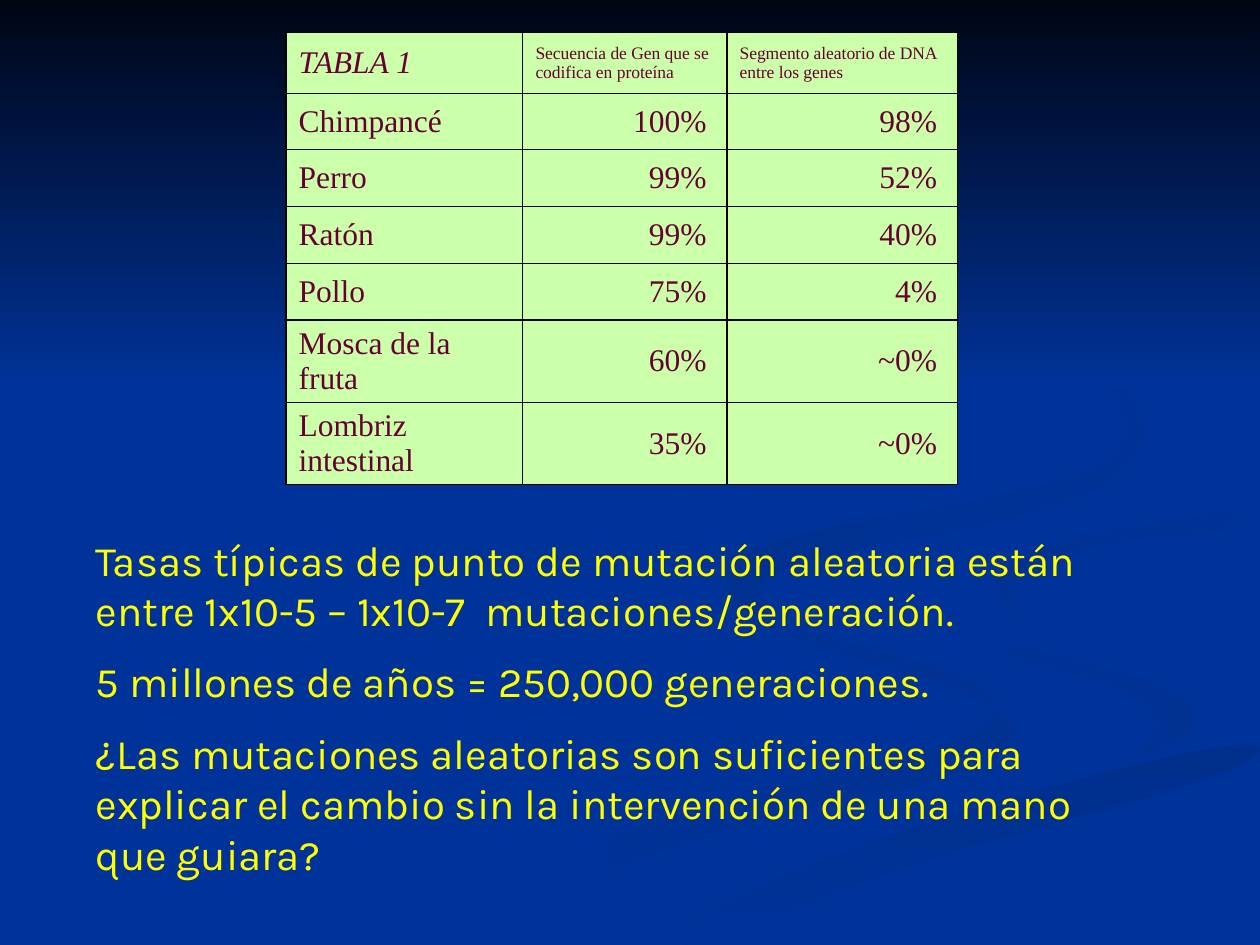
from typing import NamedTuple

from lxml.etree import SubElement
from pptx import Presentation
from pptx.dml.color import RGBColor
from pptx.enum.shapes import MSO_SHAPE
from pptx.enum.text import MSO_ANCHOR, PP_ALIGN
from pptx.oxml.ns import qn
from pptx.util import Emu, Inches, Pt

# Grid: the slide is 100 columns by 75 rows
COLS, ROWS = 100, 75
UNIT = Inches(10) // COLS

BLUE = RGBColor(0x00, 0x33, 0x99)
NIGHT = RGBColor(0x00, 0x05, 0x14)
DEEP = RGBColor(0x00, 0x2F, 0x8C)
DUSK = RGBColor(0x00, 0x31, 0x93)
MINT = RGBColor(0xCC, 0xFF, 0xAA)
WINE = RGBColor(0x66, 0x00, 0x33)
BLACK = RGBColor(0x00, 0x00, 0x00)
YELLOW = RGBColor(0xFF, 0xFF, 0x00)

Point = tuple[float, float]


class Shade(NamedTuple):
    start: RGBColor
    end: RGBColor
    angle: int  # clockwise degrees


class Ribbon(NamedTuple):
    shade: Shade
    points: list[Point]


class Entry(NamedTuple):
    name: str
    gene: str
    random: str


# Each outline lists only its bends; they are rounded when drawn
RIBBONS = [
    Ribbon(Shade(BLUE, DUSK, 0), [
        (57, 45), (58, 49), (80, 54), (78, 59), (50, 65), (30, 75),
        (36, 75), (55, 66), (80, 61), (81, 56), (60, 50)]),
    Ribbon(Shade(BLUE, DUSK, 45), [
        (72, 46), (75, 51), (91, 55), (92, 58), (89, 61), (97, 57),
        (89, 53), (75, 50)]),
    Ribbon(Shade(DEEP, BLUE, 90), [
        (50, 75), (57, 75), (70, 69), (100, 61), (100, 58), (70, 66)]),
    Ribbon(Shade(DUSK, BLUE, 45), [
        (78, 46), (82, 50), (79, 46), (87, 43), (100, 42), (100, 40),
        (83, 43)]),
    Ribbon(Shade(DEEP, BLUE, 45), [
        (76, 23), (88, 29), (90, 36), (82, 39), (59, 43), (57, 47),
        (62, 50), (59, 45), (83, 41), (92, 36), (88, 28)]),
]
SKY = Shade(NIGHT, BLUE, 90)

HEAD = Entry("TABLA 1", "Secuencia de Gen que se codifica en proteína",
             "Segmento aleatorio de DNA entre los genes")
BODY = [
    Entry("Chimpancé", "100% ", "98% "),
    Entry("Perro", "99% ", "52% "),
    Entry("Ratón", "99% ", "40% "),
    Entry("Pollo", "75% ", "4% "),
    Entry("Mosca de la fruta", "60% ", "~0% "),
    Entry("Lombriz intestinal", "35% ", "~0% "),
]
NOTES = [
    "Tasas típicas de punto de mutación aleatoria están entre "
    "1x10-5 – 1x10-7  mutaciones/generación.",
    "5 millones de años = 250,000 generaciones.",
    "¿Las mutaciones aleatorias son suficientes para explicar el cambio "
    "sin la intervención de una mano que guiara?",
]


def grid(*cells: float) -> list[Emu]:
    return [Emu(round(cell * UNIT)) for cell in cells]


def style(para, font: str, size: int, color: RGBColor, slant: bool = False) -> None:
    for run in para.runs:
        run.font.name, run.font.size = font, Pt(size)
        run.font.color.rgb = color
        run.font.italic = slant


def smooth(points: list[Point], rounds: int = 3) -> list[Point]:
    """Round a closed outline by cutting its corners again and again."""
    for _ in range(rounds):
        pairs = zip(points, points[1:] + points[:1])
        points = [(a + (c - a) * t, b + (d - b) * t)
                  for (a, b), (c, d) in pairs for t in (0.25, 0.75)]
    return points


def paint(shape, shade: Shade) -> None:
    shape.shadow.inherit = False
    shape.line.fill.background()
    shape.fill.gradient()
    shape.fill.gradient_angle = -shade.angle % 360
    for stop, color in zip(shape.fill.gradient_stops, shade[:2]):
        stop.color.rgb = color


def draw_ribbon(slide, item: Ribbon) -> None:
    first, *rest = smooth(item.points)
    pen = slide.shapes.build_freeform(*grid(*first))
    pen.add_line_segments([grid(*point) for point in rest], close=True)
    paint(pen.convert_to_shape(), item.shade)


def frame_cell(cell) -> None:
    """Fill the cell and rule its four sides."""
    props = cell._tc.get_or_add_tcPr()
    for side in ("a:lnL", "a:lnR", "a:lnT", "a:lnB"):
        line = SubElement(props, qn(side), w=str(Pt(0.75)))
        fill = SubElement(line, qn("a:solidFill"))
        SubElement(fill, qn("a:srgbClr"), val=str(BLACK))
    cell.fill.solid()
    cell.fill.fore_color.rgb = MINT


def draw_table(slide, head: Entry, body: list[Entry]) -> None:
    data = [head, *body]
    table = slide.shapes.add_table(
        len(data), len(head), *grid(22.7, 2.6, 53.3, 31.8)).table
    table.first_row = table.horz_banding = False
    for col, width in zip(table.columns, grid(18.8, 16.2, 18.3)):
        col.width = width
    for r, entry in enumerate(data):
        table.rows[r].height = grid(4.5 if r else 4.8)[0]
        for c, text in enumerate(entry):
            cell = table.cell(r, c)
            frame_cell(cell)
            cell.vertical_anchor = MSO_ANCHOR.MIDDLE
            para = cell.text_frame.paragraphs[0]
            para.text = text
            para.alignment = PP_ALIGN.RIGHT if r and c else PP_ALIGN.LEFT
            size = 10 if c and not r else 18
            style(para, "Times New Roman", size, WINE, slant=r == c == 0)


def draw_notes(slide, notes: list[str]) -> None:
    frame = slide.shapes.add_textbox(*grid(6.6, 41.9, 85.8, 25.2)).text_frame
    frame.word_wrap = True
    frame.text = "\n".join(notes)
    for para in frame.paragraphs:
        para.space_before = Pt(12)
        style(para, "Karla", 24, YELLOW)


def main() -> None:
    deck = Presentation()
    deck.slide_width, deck.slide_height = grid(COLS, ROWS)
    slide = deck.slides.add_slide(deck.slide_layouts[6])
    # Backdrop
    slide.background.fill.solid()
    slide.background.fill.fore_color.rgb = BLUE
    for item in RIBBONS:
        draw_ribbon(slide, item)
    sky = slide.shapes.add_shape(MSO_SHAPE.RECTANGLE, *grid(0, 0, COLS, 30.8))
    paint(sky, SKY)
    # Content
    draw_table(slide, HEAD, BODY)
    draw_notes(slide, NOTES)
    deck.save("out.pptx")


if __name__ == "__main__":
    main()
